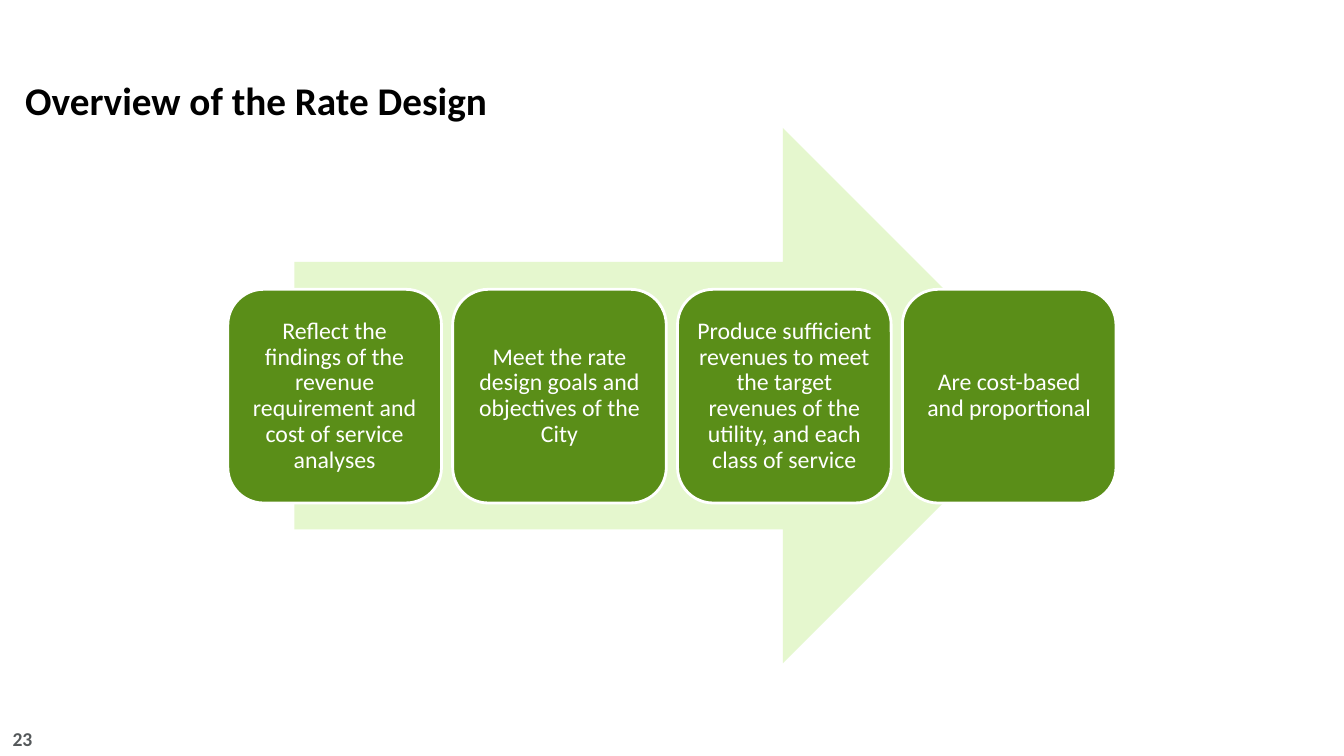
from dataclasses import dataclass

from pptx import Presentation
from pptx import util as u
from pptx.dml import color
from pptx.enum import shapes, text


@dataclass(frozen=True)
class Theme:
    font: str = "Calibri"
    ink: str = "000000"
    muted: str = "54585A"
    white: str = "FFFFFF"
    card: str = "5A8E18"
    arrow: str = "E5F7CE"
    title_size: int = 28
    card_size: int = 17
    number_size: int = 14


class SlideBuilder:
    """Places elements by percentages of the slide's width and height."""

    def __init__(self, deck, theme):
        self.deck, self.theme = deck, theme
        self.slide = deck.slides.add_slide(deck.slide_layouts[6])

    def box(self, left, top, width, height):
        across, down = self.deck.slide_width / 100, self.deck.slide_height / 100
        return [round(n) for n in (left * across, top * down, width * across, height * down)]

    def set_text(self, frame, wording, size, ink, bold=False, align=text.PP_ALIGN.LEFT,
                 anchor=text.MSO_ANCHOR.TOP, spacing=None, insets=(0.1, 0.05)):
        frame.word_wrap = True
        frame.vertical_anchor = anchor
        frame.margin_left = frame.margin_right = u.Inches(insets[0])
        frame.margin_top = frame.margin_bottom = u.Inches(insets[1])
        paragraph = frame.paragraphs[0]
        paragraph.alignment = align
        paragraph.line_spacing = spacing
        run = paragraph.add_run()
        run.text = wording
        run.font.name, run.font.size, run.font.bold = self.theme.font, u.Pt(size), bold
        run.font.color.rgb = color.RGBColor.from_string(ink)

    def label(self, place, wording, size, ink, **style):
        frame = self.slide.shapes.add_textbox(*self.box(*place)).text_frame
        self.set_text(frame, wording, size, ink, **style)

    def block(self, kind, place, fill, outline=None):
        block = self.slide.shapes.add_shape(kind, *self.box(*place))
        block.shadow.inherit = False
        block.fill.solid()
        block.fill.fore_color.rgb = color.RGBColor.from_string(fill)
        if outline:
            block.line.color.rgb = color.RGBColor.from_string(outline)
            block.line.width = u.Pt(2)
        else:
            block.line.fill.background()
        return block

    def card(self, place, wording):
        theme = self.theme
        card = self.block(shapes.MSO_SHAPE.ROUNDED_RECTANGLE, place, theme.card, theme.white)
        self.set_text(card.text_frame, wording, theme.card_size, theme.white,
                      align=text.PP_ALIGN.CENTER, anchor=text.MSO_ANCHOR.MIDDLE,
                      spacing=0.9, insets=(0.07, 0.07))


RATE_GOALS = [
    "Reflect the findings of the revenue requirement and cost of service analyses",
    "Meet the rate design goals and objectives of the City",
    "Produce sufficient revenues to meet the target revenues of the utility, "
    "and each class of service",
    "Are cost-based and proportional",
]
CARD_LEFT, CARD_TOP, CARD_WIDTH, CARD_HEIGHT = 16.95, 38.27, 15.9, 28.27
CARD_PITCH = 16.73


def main():
    deck = Presentation()
    deck.slide_width, deck.slide_height = u.Inches(13.33), u.Inches(7.5)
    theme = Theme()
    page = SlideBuilder(deck, theme)

    # Title
    page.label((0, 0, 100, 16.93), "Overview of the Rate Design", theme.title_size, theme.ink,
               bold=True, anchor=text.MSO_ANCHOR.BOTTOM, spacing=u.Pt(26), insets=(0.25, 0.05))

    # Arrow behind the cards
    page.block(shapes.MSO_SHAPE.RIGHT_ARROW, (21.91, 16.93, 56.26, 70.8), theme.arrow)

    # Row of rate goals
    for column, goal in enumerate(RATE_GOALS):
        left = CARD_LEFT + column * CARD_PITCH
        page.card((left, CARD_TOP, CARD_WIDTH, CARD_HEIGHT), goal)

    # Slide number
    page.label((0, 95.47, 3.15, 4.53), "23", theme.number_size, theme.muted,
               bold=True, align=text.PP_ALIGN.RIGHT)

    deck.save("out.pptx")


if __name__ == "__main__":
    main()
